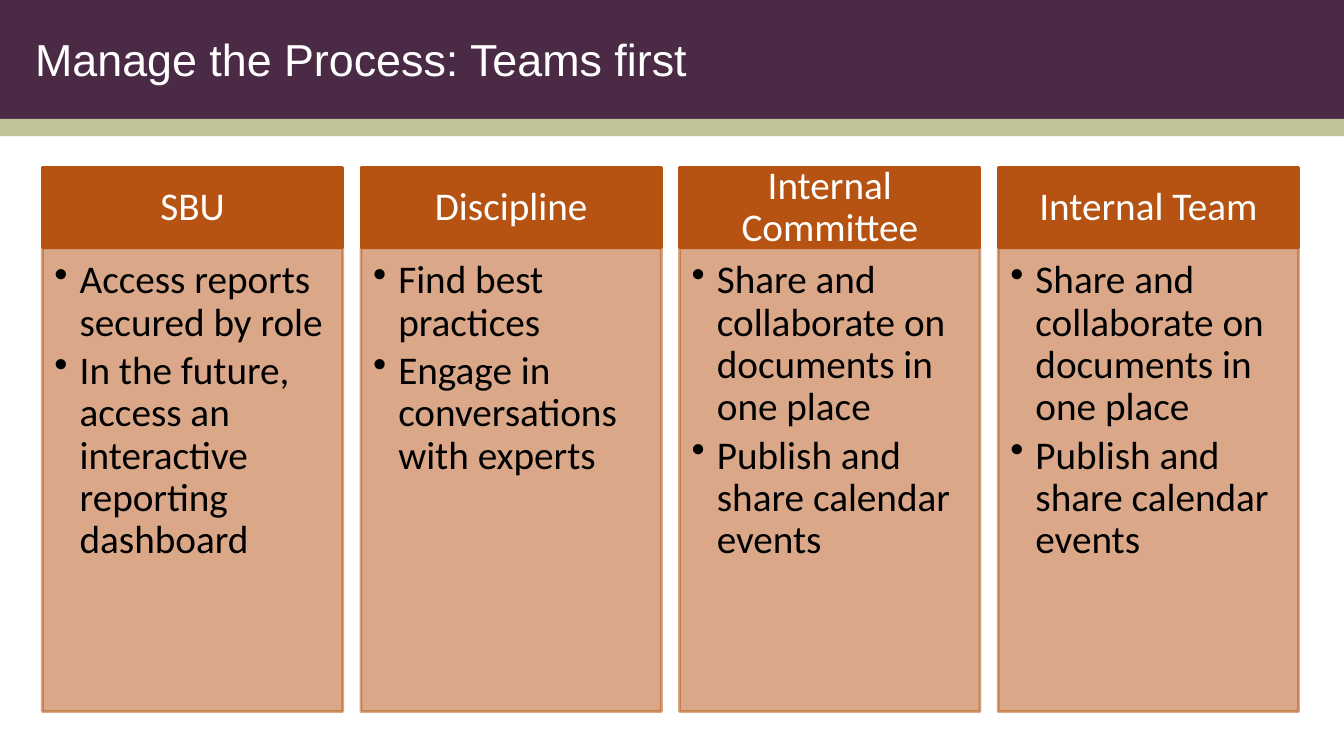
import pptx
import pptx.dml.color
import pptx.enum.shapes
import pptx.enum.text
import pptx.oxml.ns
import pptx.util
from lxml import etree

Inches = pptx.util.Inches
Pt = pptx.util.Pt
RGBColor = pptx.dml.color.RGBColor
ANCHOR = pptx.enum.text.MSO_ANCHOR
ALIGN = pptx.enum.text.PP_ALIGN

PLUM = RGBColor(0x4B, 0x2A, 0x46)
SAGE = RGBColor(0xC1, 0xC3, 0x99)
RUST = RGBColor(0xB6, 0x53, 0x12)
WHITE = RGBColor(0xFF, 0xFF, 0xFF)
BLACK = RGBColor(0x00, 0x00, 0x00)

SLIDE_WIDTH = 13.33
COLUMN_LEFT, COLUMN_PITCH, COLUMN_WIDTH = 0.42, 3.16, 2.98
HEADER_TOP, HEADER_HEIGHT = 1.66, 0.8
BODY_TOP, BODY_HEIGHT = HEADER_TOP + HEADER_HEIGHT, 4.6

SHARING = ["Share and collaborate on documents in one place",
           "Publish and share calendar events"]
TEAMS = [
    ("SBU", ["Access reports secured by role",
             "In the future, access an interactive reporting dashboard"]),
    ("Discipline", ["Find best practices",
                    "Engage in conversations with experts"]),
    ("Internal Committee", SHARING),
    ("Internal Team", SHARING),
]


def add_box(slide, left, top, width, height, color, outlined=False):
    box = slide.shapes.add_shape(
        pptx.enum.shapes.MSO_SHAPE.RECTANGLE,
        Inches(left), Inches(top), Inches(width), Inches(height))
    box.shadow.inherit = False
    box.fill.solid()
    box.fill.fore_color.rgb = color
    if outlined:
        box.line.color.rgb = color
        box.line.width = Pt(2)
    else:
        box.line.fill.background()
    return box


def make_translucent(box, percent):
    """Apply one opacity to both the fill and the outline."""
    for color in box._element.spPr.iter(pptx.oxml.ns.qn("a:srgbClr")):
        alpha = etree.SubElement(color, pptx.oxml.ns.qn("a:alpha"))
        alpha.set("val", str(percent * 1000))


def set_frame(box, anchor, left, top, right, bottom):
    frame = box.text_frame
    frame.word_wrap = True
    frame.vertical_anchor = anchor
    frame.margin_left, frame.margin_top = Inches(left), Inches(top)
    frame.margin_right, frame.margin_bottom = Inches(right), Inches(bottom)
    return frame


def add_text(paragraph, text, size, font, color, align=ALIGN.LEFT):
    paragraph.alignment = align
    run = paragraph.add_run()
    run.text = text
    run.font.size = Pt(size)
    run.font.name = font
    run.font.color.rgb = color


def add_bullet(paragraph):
    properties = paragraph._p.get_or_add_pPr()
    properties.set("marL", str(Inches(0.25)))
    properties.set("indent", str(-Inches(0.25)))
    bullet = etree.SubElement(properties, pptx.oxml.ns.qn("a:buChar"))
    bullet.set("char", "•")


def add_title(slide, text):
    title = slide.shapes.add_textbox(
        Inches(0.25), Inches(0), Inches(12), Inches(1.17))
    frame = set_frame(title, ANCHOR.MIDDLE, 0.1, 0.05, 0.1, 0.05)
    add_text(frame.paragraphs[0], text, 32, "Arial", WHITE)


def add_team(slide, left, name, benefits):
    # Team name
    header = add_box(slide, left, HEADER_TOP, COLUMN_WIDTH, HEADER_HEIGHT,
                     RUST, outlined=True)
    frame = set_frame(header, ANCHOR.MIDDLE, 0.16, 0.09, 0.16, 0.09)
    heading = frame.paragraphs[0]
    heading.line_spacing = 0.9
    add_text(heading, name, 28, "Calibri", WHITE, ALIGN.CENTER)

    # Benefits of the team
    body = add_box(slide, left, BODY_TOP, COLUMN_WIDTH, BODY_HEIGHT,
                   RUST, outlined=True)
    make_translucent(body, 50)
    frame = set_frame(body, ANCHOR.TOP, 0.12, 0.12, 0.16, 0.17)
    for index, benefit in enumerate(benefits):
        paragraph = frame.add_paragraph() if index else frame.paragraphs[0]
        add_bullet(paragraph)
        paragraph.line_spacing = 0.9
        paragraph.space_after = Pt(4.2)
        add_text(paragraph, benefit, 28, "Calibri", BLACK)


def main():
    deck = pptx.Presentation()
    deck.slide_width, deck.slide_height = Inches(SLIDE_WIDTH), Inches(7.5)
    slide = deck.slides.add_slide(deck.slide_layouts[6])

    # Title band
    add_box(slide, 0, 0, SLIDE_WIDTH, 1.25, PLUM)
    add_box(slide, 0, 1.18, SLIDE_WIDTH, 0.17, SAGE)
    add_title(slide, "Manage the Process: Teams first")

    # Team columns
    for index, (name, benefits) in enumerate(TEAMS):
        add_team(slide, COLUMN_LEFT + index * COLUMN_PITCH, name, benefits)

    deck.save("out.pptx")


if __name__ == "__main__":
    main()
